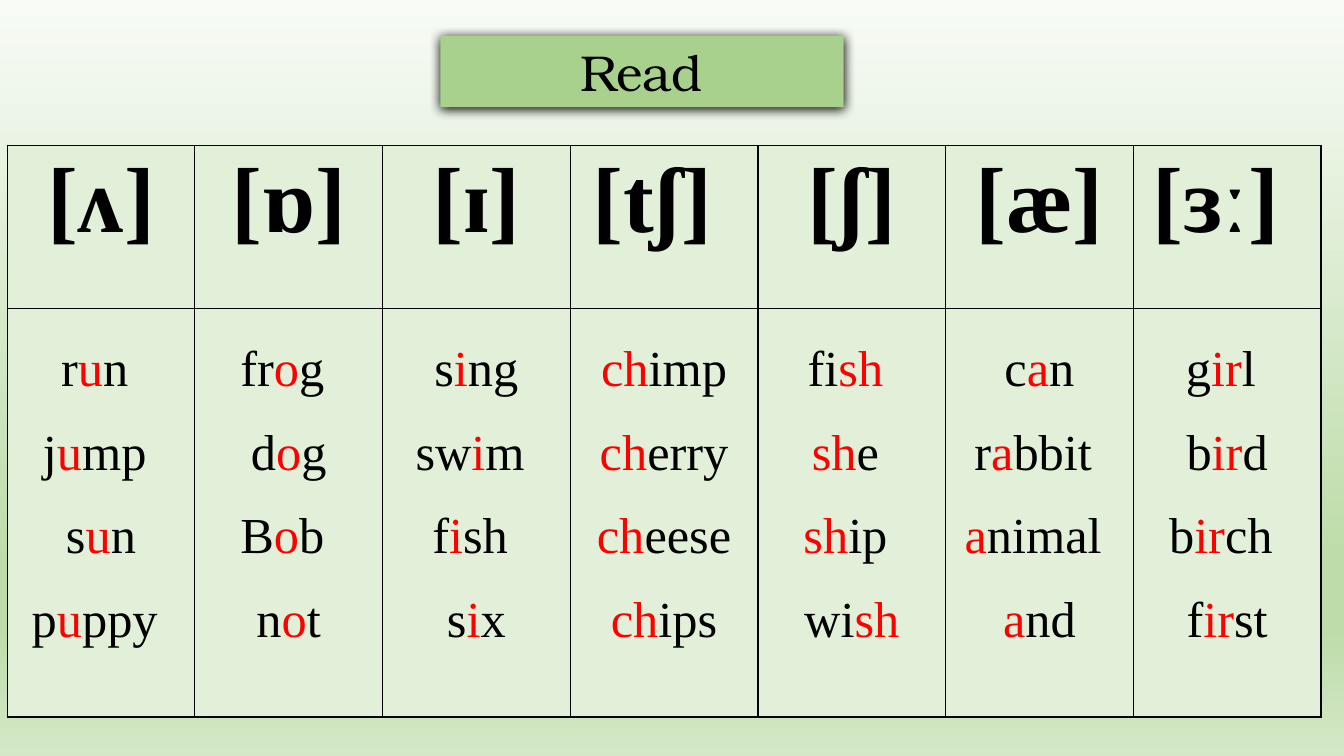
from lxml.etree import SubElement
from pptx import Presentation
from pptx.dml.color import RGBColor
from pptx.enum.shapes import MSO_SHAPE
from pptx.enum.text import MSO_ANCHOR, MSO_AUTO_SIZE, PP_ALIGN
from pptx.oxml.ns import qn
from pptx.util import Cm, Pt

COLORS = {
    "ink": "000000",
    "mark": "FF0000",
    "cell": "E2F0D9",
    "title": "A9D18E",
}
STOPS = [(0, "F8FBF6"), (74, "BEDCAA"), (83, "BEDCAA"), (100, "D4E8C6")]

# Letters between asterisks spell the sound and are shown in red.
SOUNDS = [
    ("[ʌ]", ["r*u*n ", "j*u*mp ", "s*u*n", "p*u*ppy "]),
    ("[ɒ]", ["fr*o*g ", "d*o*g", "B*o*b ", "n*o*t"]),
    ("[ɪ]", ["s*i*ng", "sw*i*m ", "f*i*sh ", "s*i*x"]),
    ("[tʃ] ", ["*ch*imp", "*ch*erry", "*ch*eese", "*ch*ips"]),
    ("[ʃ]", ["fi*sh *", "*sh*e ", "*sh*ip ", "wi*sh*"]),
    ("[æ]", ["c*a*n", "r*a*bbit ", "*a*nimal ", "*a*nd"]),
    ("[ɜː] ", ["g*ir*l ", "b*ir*d", "b*ir*ch ", "f*ir*st"]),
]


def rgb(name):
    return RGBColor.from_string(COLORS[name])


def tint(parent, code):
    SubElement(parent, qn("a:srgbClr"), val=code)


def write(frame, lines, size, font="Times New Roman", bold=False, space=None):
    """Write one centred paragraph per line, with marked letters in red."""
    for row, line in enumerate(lines):
        para = frame.add_paragraph() if row else frame.paragraphs[0]
        para.alignment = PP_ALIGN.CENTER
        para.line_spacing = space
        for part, text in enumerate(line.split("*")):
            if not text:
                continue
            run = para.add_run()
            run.text = text
            run.font.name = font
            run.font.size = Pt(size)
            run.font.bold = bold
            run.font.color.rgb = rgb("mark" if part % 2 else "ink")


def paint(slide):
    """Fill the background with a gradient from top to bottom."""
    fill = slide.background.fill
    fill.gradient()
    fill.gradient_angle = 270
    stops = slide.element.xpath(".//a:gsLst")[0]
    for old in list(stops):
        stops.remove(old)
    for pos, code in STOPS:
        tint(SubElement(stops, qn("a:gs"), pos=str(pos * 1000)), code)


def border(cell):
    props = cell._tc.get_or_add_tcPr()
    for side in ("lnL", "lnR", "lnT", "lnB"):
        line = SubElement(props, qn(f"a:{side}"), w=str(Pt(1)))
        tint(SubElement(line, qn("a:solidFill")), COLORS["ink"])


def style(cell):
    border(cell)
    cell.fill.solid()
    cell.fill.fore_color.rgb = rgb("cell")


def add_grid(slide):
    width, heights = Cm(4.73), (Cm(4.12), Cm(10.29))
    count = len(SOUNDS)
    table = slide.shapes.add_table(
        2, count, Cm(0.18), Cm(3.66), width * count, sum(heights)).table
    table.first_row = table.horz_banding = False
    for row, height in zip(table.rows, heights):
        row.height = height
    for col, (sound, words) in enumerate(SOUNDS):
        table.columns[col].width = width
        head, body = table.cell(0, col), table.cell(1, col)
        style(head)
        style(body)
        write(head.text_frame, [sound], 66, bold=True)
        write(body.text_frame, words, 36, space=1.5)


def add_title(slide, text):
    box = slide.shapes.add_shape(
        MSO_SHAPE.RECTANGLE, Cm(11.1), Cm(0.9), Cm(10.16), Cm(1.8))
    box.fill.solid()
    box.fill.fore_color.rgb = rgb("title")
    box.line.fill.background()
    box.shadow.inherit = False
    effects = box.element.spPr.find(qn("a:effectLst"))
    tint(SubElement(effects, qn("a:outerShdw"), blurRad=str(Pt(8.5)),
                    dist=str(Pt(1)), dir="5400000"), COLORS["ink"])
    frame = box.text_frame
    frame.word_wrap = True
    frame.auto_size = MSO_AUTO_SIZE.SHAPE_TO_FIT_TEXT
    frame.vertical_anchor = MSO_ANCHOR.MIDDLE
    write(frame, [text], 36, font="TeX Gyre Bonum")


def main():
    deck = Presentation()
    deck.slide_width, deck.slide_height = Cm(33.87), Cm(19.05)
    slide = deck.slides.add_slide(deck.slide_layouts[6])
    paint(slide)
    add_grid(slide)
    add_title(slide, "Read")
    deck.save("out.pptx")


if __name__ == "__main__":
    main()
